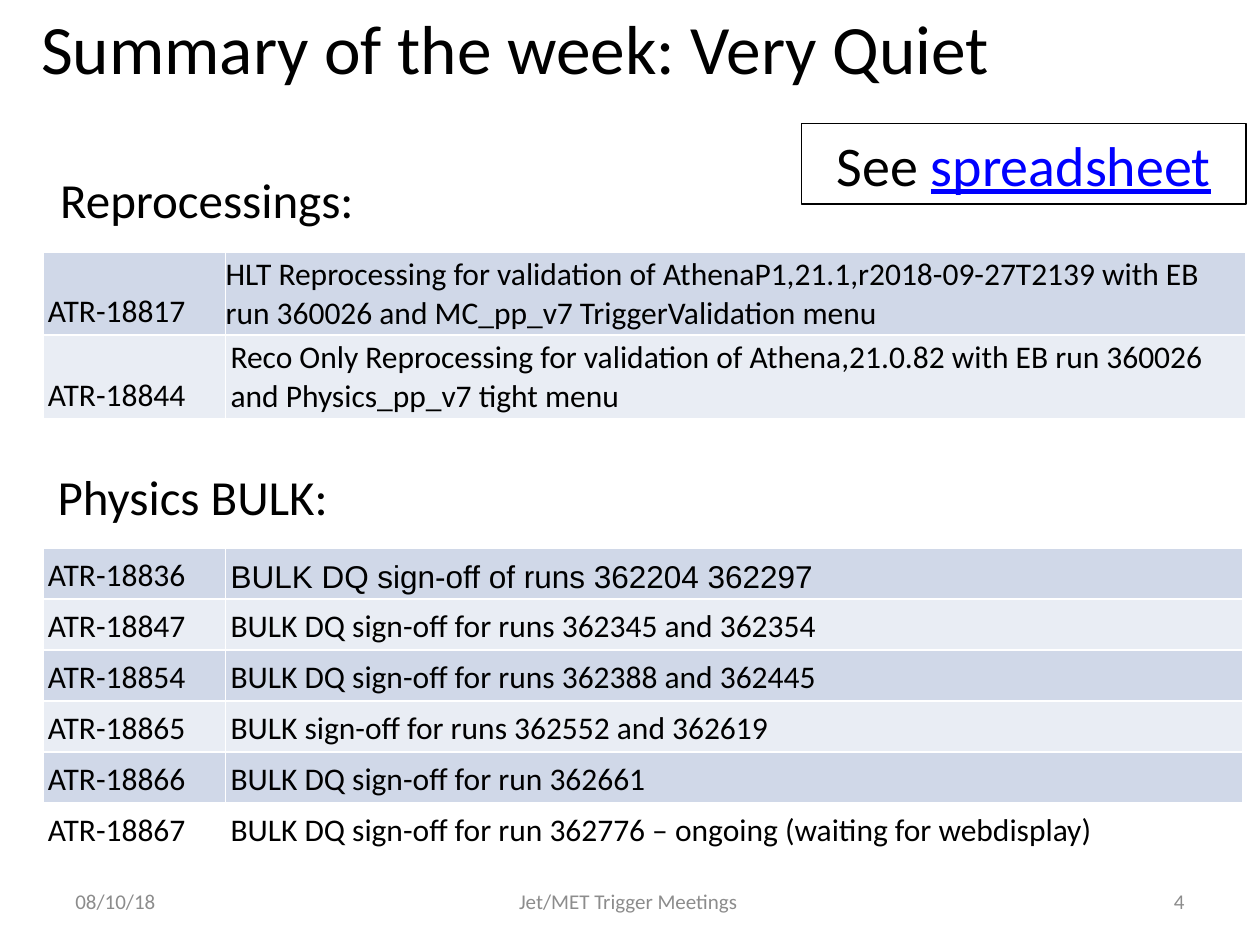
from lxml import etree
from pptx import Presentation
from pptx.dml.color import RGBColor
from pptx.enum.shapes import MSO_SHAPE
from pptx.enum.text import MSO_ANCHOR, MSO_AUTO_SIZE, PP_ALIGN
from pptx.oxml.ns import qn
from pptx.util import Inches, Pt

LEFT, CENTER, RIGHT = PP_ALIGN.LEFT, PP_ALIGN.CENTER, PP_ALIGN.RIGHT
TOP, MIDDLE, BOTTOM = MSO_ANCHOR.TOP, MSO_ANCHOR.MIDDLE, MSO_ANCHOR.BOTTOM

COLORS = {"text": "000000", "footer": "8C8C8C", "link": "0000FF",
          "border": "FFFFFF", "band_dark": "D0D8E8", "band_light": "E9EDF4"}
FONT, ALT_FONT = "Calibri", "Arial"

TITLE = "Summary of the week: Very Quiet"
# text, box, size, color, alignment, anchor
TEXTS = [
    ("Reprocessings:", (0.38, 1.3, 3.03, 0.57), 28, "text", LEFT, TOP),
    ("Physics BULK:", (0.36, 3.65, 3.03, 0.57), 28, "text", LEFT, TOP),
    ("08/10/18", (0.5, 6.95, 2.33, 0.4), 12, "footer", LEFT, MIDDLE),
    ("Jet/MET Trigger Meetings ", (3.42, 6.95, 3.17, 0.4), 12, "footer", CENTER, MIDDLE),
    ("4", (7.17, 6.95, 2.33, 0.4), 12, "footer", RIGHT, MIDDLE),
]
REPROCESSINGS = [
    ("ATR-18817", "HLT Reprocessing for validation of AthenaP1,21.1,r2018-09-27T2139 "
                  "with EB run 360026 and MC_pp_v7 TriggerValidation menu"),
    ("ATR-18844", "Reco Only Reprocessing for validation of Athena,21.0.82 "
                  "with EB run 360026 and Physics_pp_v7 tight menu"),
]
BULK = [
    ("ATR-18836", "BULK DQ sign-off of runs 362204 362297"),
    ("ATR-18847", "BULK DQ sign-off for runs 362345 and 362354"),
    ("ATR-18854", "BULK DQ sign-off for runs 362388 and 362445"),
    ("ATR-18865", "BULK sign-off for runs 362552 and 362619"),
    ("ATR-18866", "BULK DQ sign-off for run 362661"),
    ("ATR-18867", "BULK DQ sign-off for run 362776 – ongoing (waiting for webdisplay)"),
]


def rgb(name):
    return RGBColor.from_string(COLORS[name])


def inches(box):
    return [Inches(v) for v in box]


def style(p, size, color="text", align=LEFT):
    p.alignment = align
    p.font.name, p.font.size = FONT, Pt(size)
    p.font.color.rgb = rgb(color)


def add_text(s, text, box, size, color, align, anchor):
    tf = s.shapes.add_textbox(*inches(box)).text_frame
    tf.word_wrap, tf.vertical_anchor = True, anchor
    tf.text = text
    style(tf.paragraphs[0], size, color, align)


def add_borders(cell):
    """Insert the four edge lines ahead of the fill, as the schema requires."""
    tc_pr = cell._tc.get_or_add_tcPr()
    for i, edge in enumerate(("a:lnL", "a:lnR", "a:lnT", "a:lnB")):
        ln = etree.Element(qn(edge), w=str(Pt(1)))
        fill = etree.SubElement(ln, qn("a:solidFill"))
        etree.SubElement(fill, qn("a:srgbClr"), val=COLORS["border"])
        tc_pr.insert(i, ln)


def add_table(s, rows, left, top, widths, row_height):
    box = inches((left, top, sum(widths), row_height * len(rows)))
    table = s.shapes.add_table(len(rows), len(widths), *box).table
    table.first_row = table.horz_banding = False
    for col, width in zip(table.columns, widths):
        col.width = Inches(width)
    for r, row in enumerate(rows):
        table.rows[r].height = Inches(row_height)
        for c, text in enumerate(row):
            cell = table.cell(r, c)
            cell.text = text
            cell.vertical_anchor = BOTTOM
            cell.margin_left = cell.margin_right = Inches(0.04)
            cell.margin_top = cell.margin_bottom = Inches(0.03)
            cell.fill.solid()
            cell.fill.fore_color.rgb = rgb("band_light" if r % 2 else "band_dark")
            style(cell.text_frame.paragraphs[0], 18)
            add_borders(cell)
    return table


def main():
    prs = Presentation()
    prs.slide_width, prs.slide_height = Inches(10), Inches(7.5)
    s = prs.slides.add_slide(prs.slide_layouts[5])

    title = s.shapes.title
    title.left, title.top, title.width, title.height = inches((0, 0, 8.18, 0.74))
    tf = title.text_frame
    tf.text = TITLE
    tf.auto_size, tf.vertical_anchor = MSO_AUTO_SIZE.NONE, MIDDLE
    style(tf.paragraphs[0], 39.6, align=CENTER)

    for item in TEXTS:
        add_text(s, *item)

    sp = s.shapes.add_shape(MSO_SHAPE.RECTANGLE, *inches((6.36, 0.98, 3.53, 0.64)))
    sp.shadow.inherit = False
    sp.fill.background()
    sp.line.color.rgb, sp.line.width = rgb("text"), Pt(0.75)
    p = sp.text_frame.paragraphs[0]
    style(p, 32, align=CENTER)
    p.add_run().text = "See "
    link = p.add_run()
    link.text = "spreadsheet"
    link.font.underline = True
    link.font.color.rgb = rgb("link")

    reprocessings = add_table(s, REPROCESSINGS, 0.34, 2, (1.45, 8.1), 0.65)
    first = reprocessings.cell(0, 1)
    first.margin_left = first.margin_right = 0

    bulk = add_table(s, BULK, 0.34, 4.35, (1.45, 8.07), 0.405)
    bulk.cell(0, 1).text_frame.paragraphs[0].font.name = ALT_FONT
    for cell in bulk.rows[len(BULK) - 1].cells:
        cell.fill.background()

    prs.save("out.pptx")


if __name__ == "__main__":
    main()
